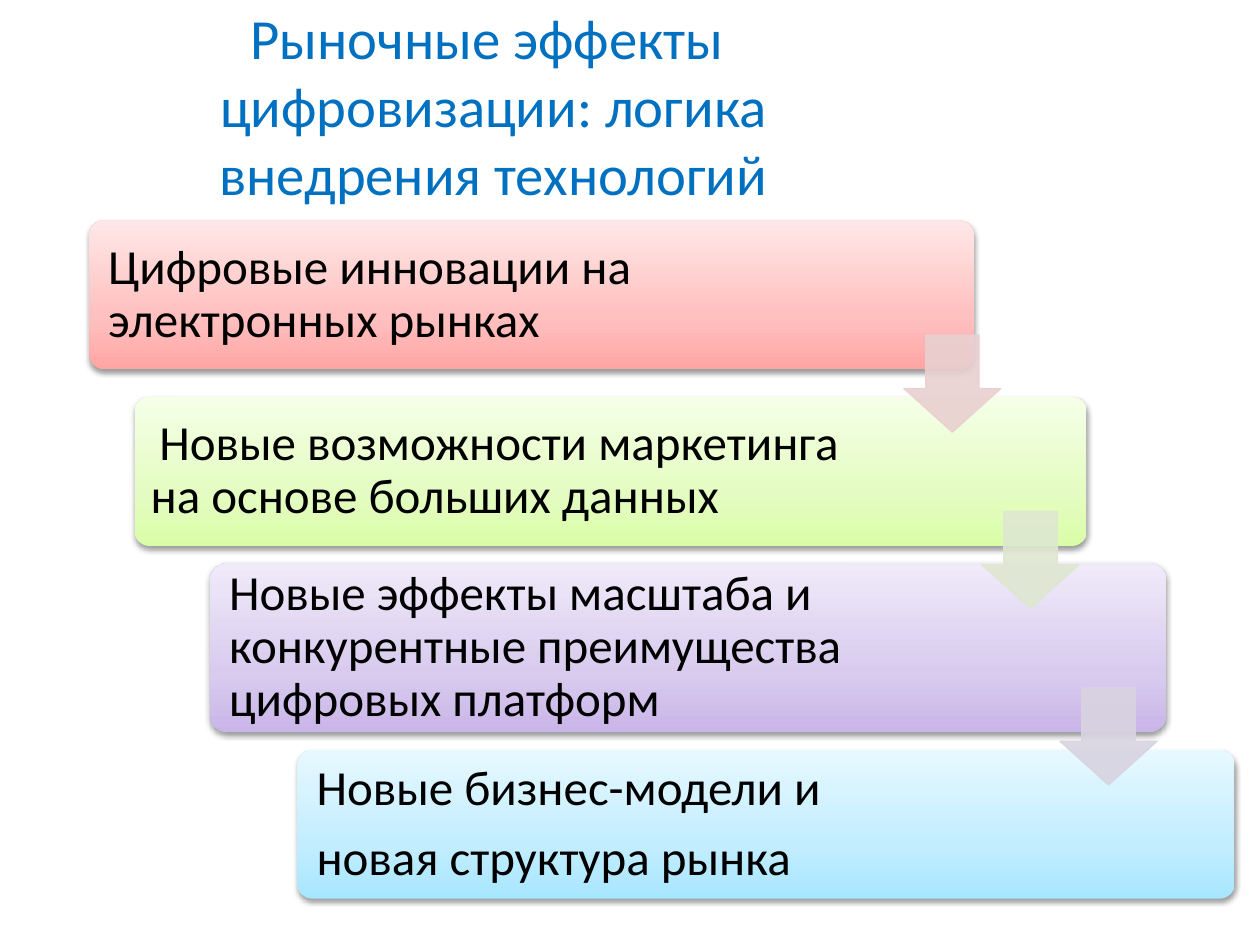
from copy import deepcopy
from lxml.etree import SubElement
from pptx import Presentation
from pptx.dml.color import RGBColor
from pptx.enum.shapes import MSO_SHAPE
from pptx.enum.text import MSO_ANCHOR, PP_ALIGN
from pptx.oxml.ns import qn
from pptx.util import Pt

HUES = {
    "title": "0070C0", "text": "000000", "shade": "000000",
    "red": ("FFA6A5", "FFC0BF", "FFE7E7"),
    "green": ("DAFDA7", "E4FCC2", "F5FFE7"),
    "violet": ("C9B5E8", "D8CBEE", "F0EAF9"),
    "blue": ("A7E6FF", "C1EDFF", "E7F8FF"),
    "arrows": ("E8D0D0", "DEE7D1", "D8D3E0"),
}


class Deck:
    """Holds the style and the current slide."""

    font = "Calibri"
    size = 28
    stops = (0, 0.35, 1)

    def __init__(self):
        self.file = Presentation()
        self.file.slide_width, self.file.slide_height = Pt(720), Pt(540)
        self.slide = self.file.slides.add_slide(self.file.slide_layouts[6])

    def ink(self, run, size, hue):
        run.font.name = self.font
        run.font.size = Pt(size)
        run.font.color.rgb = RGBColor.from_string(HUES[hue])

    def frame(self, box, pad):
        frame = self.slide.shapes.add_textbox(*map(Pt, box)).text_frame
        frame.word_wrap = True
        frame.vertical_anchor = MSO_ANCHOR.MIDDLE
        frame.margin_left = frame.margin_right = Pt(pad[0])
        frame.margin_top = frame.margin_bottom = Pt(pad[1])
        return frame

    def title(self, box, text, size):
        para = self.frame(box, (7.2, 3.6)).paragraphs[0]
        para.text = text
        para.alignment = PP_ALIGN.CENTER
        for run in para.runs:
            self.ink(run, size, "title")

    def shape(self, kind, box, ratios):
        shape = self.slide.shapes.add_shape(kind, *map(Pt, box))
        for spot, ratio in enumerate(ratios):
            shape.adjustments[spot] = ratio
        shape.shadow.inherit = False
        return shape

    def card(self, box, hues):
        shape = self.shape(MSO_SHAPE.ROUNDED_RECTANGLE, box, [0.1])
        shape.line.fill.background()
        shape.fill.gradient()
        shape.fill.gradient_angle = 90
        props = shape.element.spPr
        stops = props.find(".//" + qn("a:gsLst"))
        stops.append(deepcopy(stops[-1]))
        for stop, place, hue in zip(shape.fill.gradient_stops, self.stops, hues):
            stop.position = place
            stop.color.rgb = RGBColor.from_string(hue)
        shade = SubElement(
            props.find(qn("a:effectLst")), qn("a:outerShdw"),
            blurRad=str(Pt(3.1)), dist=str(Pt(1.6)), dir="5400000", rotWithShape="0")
        tint = SubElement(shade, qn("a:srgbClr"), val=HUES["shade"])
        SubElement(tint, qn("a:alpha"), val="38000")

    def label(self, box, text, pad, lead=0):
        frame = self.frame(box, (pad, pad))
        frame.text = text
        for para in frame.paragraphs:
            para.line_spacing = 0.9
            para.space_after = Pt(0.35 * self.size)
            if lead:
                words = para.text.lstrip()
                para.text = " "
                self.ink(para.runs[0], lead, "text")
                para.add_run().text = words
            self.ink(para.runs[-1], self.size, "text")

    def arrow(self, box, hue):
        shape = self.shape(MSO_SHAPE.DOWN_ARROW, box, [0.55, 0.45])
        shape.line.width = Pt(0.75)
        for fill in (shape.fill, shape.line.fill):
            fill.solid()
            fill.fore_color.rgb = RGBColor.from_string(hue)
        for tint in shape.element.spPr.iter(qn("a:srgbClr")):
            SubElement(tint, qn("a:alpha"), val="90000")


def main():
    deck = Deck()
    deck.title((0, 15, 564, 90),
               "Рыночные эффекты \nцифровизации: логика\nвнедрения технологий", 32.4)
    steps = [
        ((51, 126, 505.5, 85), 412, "red", 8.4, 0,
         "Цифровые инновации на электронных рынках"),
        ((77, 227, 544, 85), 437, "green", 6.6, 22,
         " Новые возможности маркетинга на основе больших данных"),
        ((120, 322, 546.5, 96.5), 439, "violet", 8.4, 0,
         "Новые эффекты масштаба и конкурентные преимущества цифровых платформ"),
        ((170, 428.5, 535.5, 85), 430.5, "blue", 8.4, 0,
         "Новые бизнес-модели и\nновая структура рынка"),
    ]
    for box, width, hue, pad, lead, text in steps:
        left, top, _, height = box
        deck.card(box, HUES[hue])
        deck.label((left + 2.5, top + 2.5, width, height - 5), text, pad, lead)
    for step, hue in enumerate(HUES["arrows"]):
        deck.arrow((516.5 + 44.6 * step, 191.5 + 100.8 * step, 55.5, 55.5), hue)
    deck.file.save("out.pptx")


if __name__ == "__main__":
    main()
